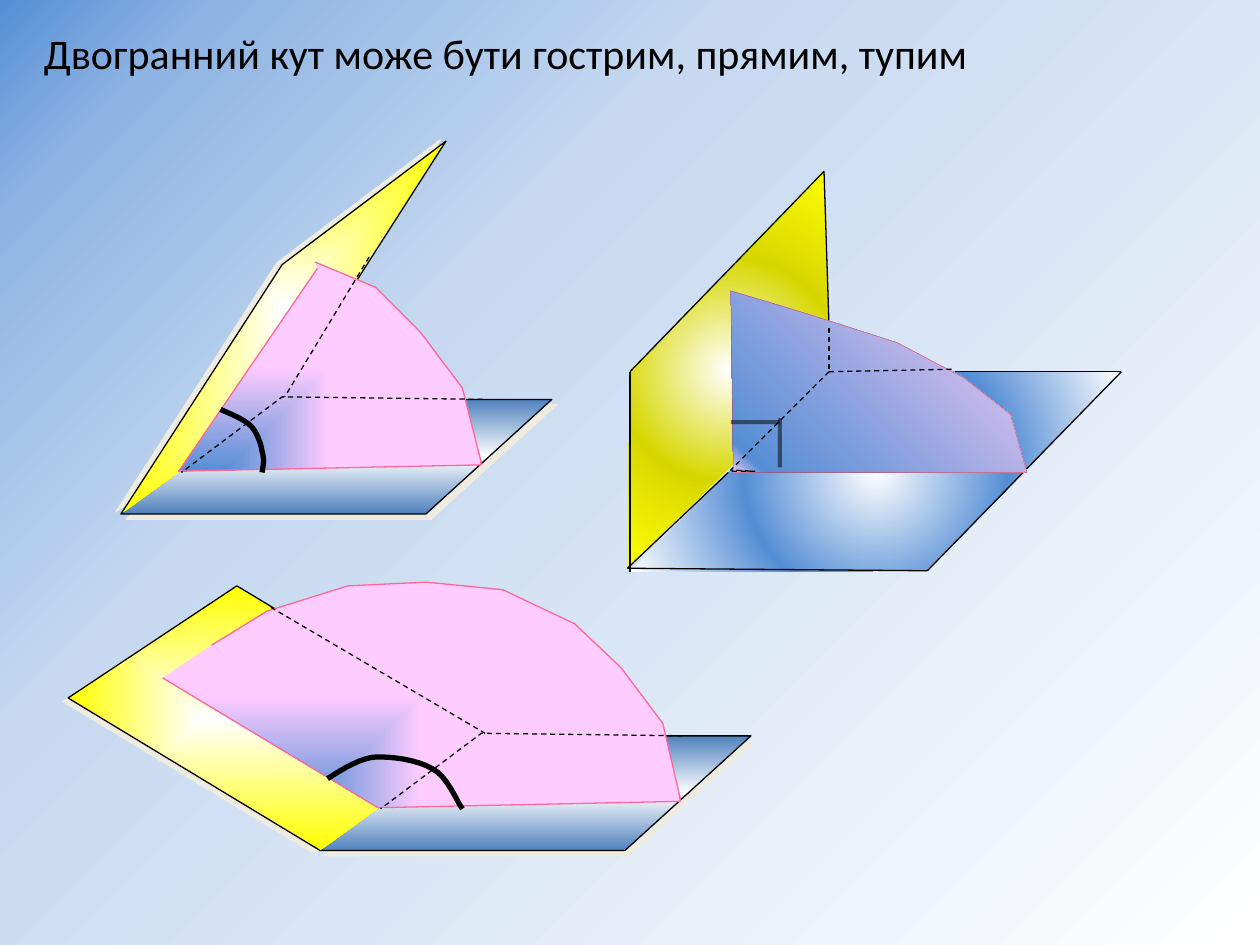
import lxml.etree
import pptx
import pptx.dml.color
import pptx.enum.dml
import pptx.enum.shapes
import pptx.enum.text
import pptx.oxml.ns
import pptx.util

Inches = pptx.util.Inches
Pt = pptx.util.Pt
RGBColor = pptx.dml.color.RGBColor
qn = pptx.oxml.ns.qn
SubElement = lxml.etree.SubElement

BLACK = RGBColor(0, 0, 0)
WHITE = RGBColor(255, 255, 255)
YELLOW = RGBColor(255, 255, 0)
OLIVE = RGBColor(0xD7, 0xD7, 0)
STEEL = RGBColor(0x4F, 0x81, 0xBD)
BLUE = RGBColor(0x55, 0x8E, 0xD5)
SKY = RGBColor(0x8E, 0xB4, 0xE3)
PALE = RGBColor(0xC6, 0xD9, 0xF1)
PINK = RGBColor(0xFF, 0xCC, 0xFF)
LILAC = RGBColor(0xF6, 0xCA, 0xF4)
ROSE = RGBColor(0xFF, 0x66, 0x99)
RED = RGBColor(255, 0, 0)
CREAM = RGBColor(0xEE, 0xEC, 0xE1)

CENTRE = (50, 50, 50, 50)
LOWER_LEFT = (0, 100, 100, 0)
UPPER_LEFT = (0, 0, 100, 100)
DASH = pptx.enum.dml.MSO_LINE.DASH
THIN = {"color": BLACK, "width": 0.75}
DASHED = {"color": BLACK, "width": 0.75, "dash": DASH}
THICK = {"color": BLACK, "width": 3}
SECTOR_LINE = {"color": ROSE, "width": 0.75}
FLOOR_FILL = ([(0, WHITE), (100, STEEL)], "rect", CENTRE)
WALL_FILL = ([(0, WHITE), (100, YELLOW)], "rect", CENTRE)
SECTOR_FILL = ([(0, BLUE), (100, PINK)], "rect", LOWER_LEFT)


def paint(holder, stops, kind, focus):
    gradient = lxml.etree.Element(qn("a:gradFill"), rotWithShape="1")
    stop_list = SubElement(gradient, qn("a:gsLst"))
    for position, color in stops:
        stop = SubElement(stop_list, qn("a:gs"), pos=str(position * 1000))
        SubElement(stop, qn("a:srgbClr"), val=str(color))
    shade = SubElement(gradient, qn("a:path"))
    shade.set("path", kind)
    sides = {side: str(value * 1000) for side, value in zip("ltrb", focus)}
    SubElement(shade, qn("a:fillToRect"), sides)
    holder.replace(holder.find(qn("a:solidFill")), gradient)


def draw(parent, points, fill=None, line=None, shadow=None, straight=False):
    places = [(Inches(x), Inches(y)) for x, y in points]
    if straight:
        shape = parent.shapes.add_connector(
            pptx.enum.shapes.MSO_CONNECTOR.STRAIGHT, *places[0], *places[1])
        effects = SubElement(shape._element.spPr, qn("a:effectLst"))
    else:
        closed = points[0] == points[-1]
        builder = parent.shapes.build_freeform(*places[0], scale=1.0)
        builder.add_line_segments(places[1:-1] if closed else places[1:], close=closed)
        shape = builder.convert_to_shape()
        shape.shadow.inherit = False
        effects = shape._element.spPr.find(qn("a:effectLst"))
        if fill:
            shape.fill.solid()
            paint(shape._element.spPr, *fill)
        else:
            shape.fill.background()
    if line:
        shape.line.color.rgb = line["color"]
        shape.line.width = Pt(line["width"])
        if "dash" in line:
            shape.line.dash_style = line["dash"]
        if "alpha" in line:
            color = shape._element.spPr.find(".//" + qn("a:ln")).find(".//" + qn("a:srgbClr"))
            SubElement(color, qn("a:alpha"), val=str(line["alpha"] * 1000))
    else:
        shape.line.fill.background()
    if shadow:
        distance, angle = shadow
        cast = SubElement(effects, qn("a:outerShdw"), dist=str(Pt(distance)),
                          dir=str(angle * 60000), algn="ctr", rotWithShape="0")
        SubElement(cast, qn("a:srgbClr"), val=str(CREAM))


deck = pptx.Presentation()
deck.slide_width = Inches(10)
deck.slide_height = Inches(7.5)
page = deck.slides.add_slide(deck.slide_layouts[6])
page.background.fill.solid()
paint(page._element.find(".//" + qn("p:bgPr")),
      [(0, BLUE), (10, SKY), (34, PALE), (100, WHITE)], "circle", UPPER_LEFT)

box = page.shapes.add_textbox(Inches(0.25), Inches(0.17), Inches(9.17), Inches(0.5))
box.text_frame.word_wrap = True
box.text_frame.auto_size = pptx.enum.text.MSO_AUTO_SIZE.SHAPE_TO_FIT_TEXT
para = box.text_frame.paragraphs[0]
span = para.add_run()
span.text = "Двогранний кут може бути гострим, прямим, тупим"
for name, value in {"name": "Calibri", "size": Pt(24)}.items():
    setattr(span.font, name, value)
span.font.color.rgb = BLACK

floor = [(0.96, 4.08), (1.96, 3.17), (4.38, 3.17), (3.38, 4.08), (0.96, 4.08)]
hinge = [(3.83, 3.17), (2.24, 3.15), (1.44, 3.75)]
acute = {
    "shift": (0, 0),
    "floor_shadow": (4.2, 45),
    "wall_shadow": (3.2, 198),
    "wall": [(2.24, 3.15), (3.54, 1.12), (2.24, 2.1), (0.96, 4.08)],
    "sector": [(2.52, 2.13), (1.42, 3.74), (3.82, 3.69), (3.81, 3.63), (3.82, 3.67),
               (3.67, 3.08), (3.34, 2.64), (2.98, 2.28), (2.5, 2.08)],
    "arc": [(1.75, 3.25), (1.79, 3.27), (1.93, 3.32), (1.99, 3.38), (2.04, 3.43),
            (2.07, 3.52), (2.08, 3.58), (2.1, 3.65), (2.09, 3.69), (2.08, 3.75)],
    "hidden": [(2.93, 2.04), (2.26, 3.15)],
}
obtuse = {
    "shift": (1.58, 2.67),
    "floor_shadow": (3.6, 56),
    "wall_shadow": (3.6, 146),
    "wall": [(3.82, 5.82), (1.88, 4.65), (0.54, 5.54), (2.54, 6.75)],
    "sector": [(1.29, 5.38), (3, 6.41), (5.4, 6.36), (5.39, 6.3), (5.4, 6.34),
               (5.26, 5.74), (4.93, 5.3), (4.56, 4.95), (3.99, 4.68), (3.38, 4.62),
               (2.76, 4.65), (2.12, 4.85), (1.68, 5.12)],
    "arc": [(2.6, 6.18), (2.65, 6.15), (2.82, 6.03), (2.96, 6.01), (3.1, 6),
            (3.31, 6.03), (3.43, 6.1), (3.55, 6.16), (3.62, 6.35), (3.67, 6.42)],
    "hidden": [(2.15, 4.82), (3.85, 5.82)],
}
for angle in (acute, obtuse):
    right, down = angle["shift"]
    moved_floor, moved_hinge = [[(x + right, y + down) for x, y in outline]
                                for outline in (floor, hinge)]
    draw(page, moved_floor, FLOOR_FILL, THIN, angle["floor_shadow"])
    draw(page, angle["wall"], WALL_FILL, THIN, angle["wall_shadow"])
    group = page.shapes.add_group_shape()
    draw(group, angle["sector"], SECTOR_FILL, SECTOR_LINE)
    controls = angle["arc"]
    curve = [controls[0]]
    for start in range(0, len(controls) - 1, 3):
        for step in range(1, 9):
            t = step / 8
            weights = ((1 - t) ** 3, 3 * t * (1 - t) ** 2, 3 * t * t * (1 - t), t ** 3)
            curve.append(tuple(sum(weight * point[axis] for weight, point
                                   in zip(weights, controls[start:start + 4]))
                               for axis in (0, 1)))
    draw(group, curve, line=THICK)
    draw(page, moved_hinge, line=DASHED)
    draw(page, angle["hidden"], line=DASHED)

draw(page, [(6.54, 1.36), (6.58, 2.93), (4.98, 4.51), (5, 2.95), (6.54, 1.36)],
     ([(0, WHITE), (50, OLIVE), (100, YELLOW)], "circle", CENTRE))
draw(page, [(6.58, 2.95), (8.9, 2.95), (7.36, 4.53), (5, 4.54), (6.58, 2.95)],
     ([(0, WHITE), (50, BLUE), (100, WHITE)], "circle", CENTRE))
wall_edges = [(6.58, 2.6), (6.54, 1.36), (5, 2.95), (5, 4.54)]
floor_edges = [(5.78, 3.75), (4.98, 4.51), (7.36, 4.53), (8.9, 2.95), (7.58, 2.95)]
for edges in (wall_edges, floor_edges):
    for edge in zip(edges, edges[1:]):
        draw(page, edge, line=THIN, straight=True)

group = page.shapes.add_group_shape()
draw(group, [(5.8, 2.31), (5.82, 3.75), (8.15, 3.75), (8.02, 3.29), (7.65, 3),
             (7.12, 2.72), (6.59, 2.55), (6.24, 2.44), (5.8, 2.31)],
     ([(0, LILAC), (7, BLUE), (100, LILAC)], "circle", LOWER_LEFT),
     {"color": RED, "width": 0.25, "alpha": 51})
for mark in ([(5.8, 3.35), (6.19, 3.35)], [(6.19, 3.32), (6.19, 3.71)]):
    draw(group, mark, line={"color": BLACK, "width": 2.25, "alpha": 51}, straight=True)
draw(page, [(6.58, 2.95), (7.58, 2.93)], line=DASHED, straight=True)
draw(page, [(6.58, 2.95), (5.8, 3.73), (5.99, 3.74), (5.8, 3.74)], line=DASHED)
draw(page, [(6.58, 2.6), (6.58, 2.95)], line=DASHED, straight=True)

deck.save("out.pptx")
